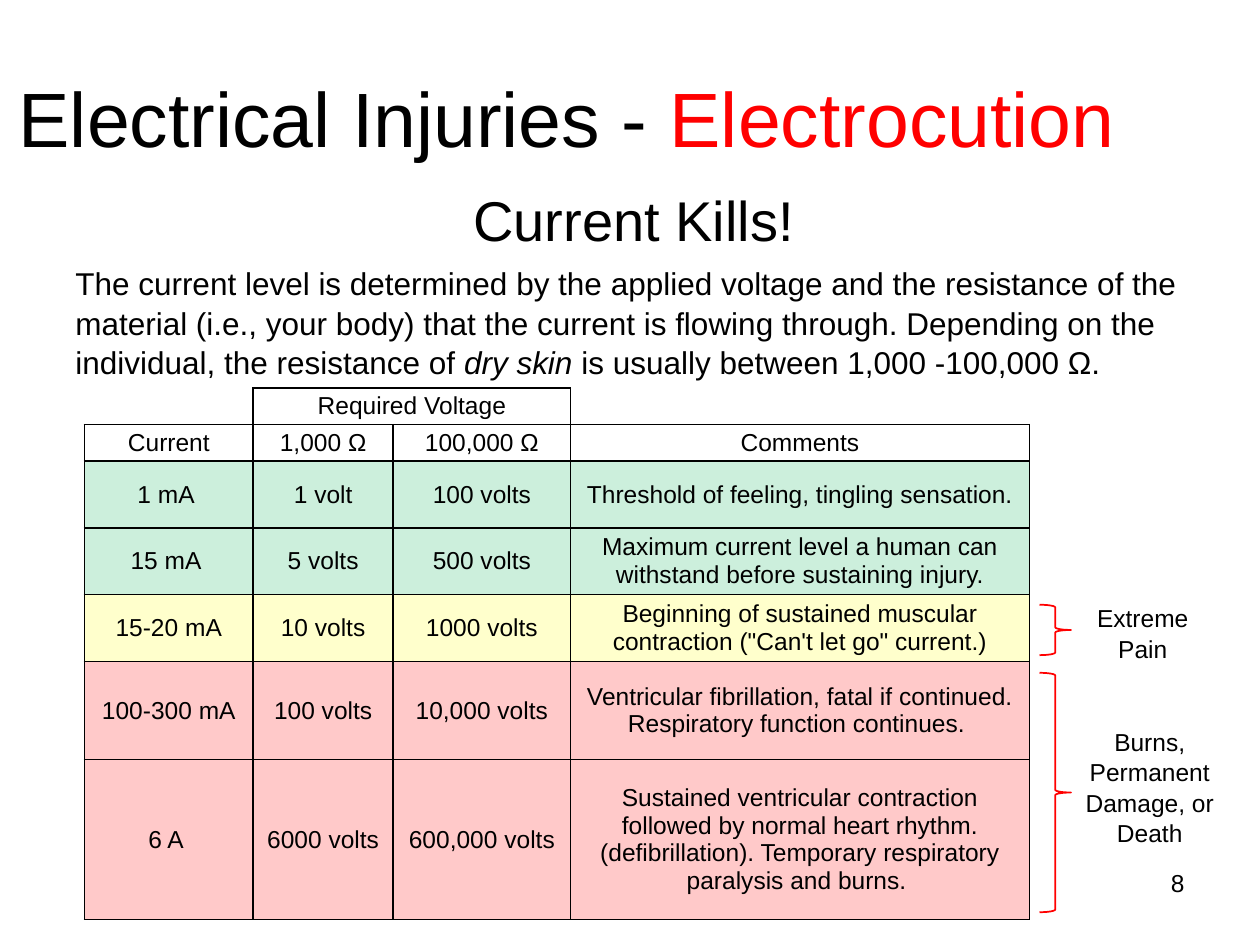
from lxml import etree
from pptx import Presentation
from pptx.dml.color import RGBColor
from pptx.enum.shapes import MSO_SHAPE
from pptx.enum.text import MSO_ANCHOR, PP_ALIGN
from pptx.oxml.ns import qn
from pptx.util import Inches, Pt

BRACE = MSO_SHAPE.RIGHT_BRACE
TOP, MIDDLE = MSO_ANCHOR.TOP, MSO_ANCHOR.MIDDLE
LEFT, CENTER, RIGHT = PP_ALIGN.LEFT, PP_ALIGN.CENTER, PP_ALIGN.RIGHT

COLORS = {
    "black": "000000",
    "red": "FF0000",
    "green": "00B050",
    "yellow": "FFFF00",
}
COLS = [1.34, 1.11, 1.41, 3.64]
ROWS = [
    (0.29, None, ["", "Required Voltage", "", ""]),
    (0.29, None, ["Current", "1,000 Ω", "100,000 Ω", "Comments"]),
    (0.53, ("green", 20), ["1 mA ", "1 volt", "100 volts",
                           "Threshold of feeling, tingling sensation."]),
    (0.53, ("green", 20), ["15 mA ", "5 volts", "500 volts",
                           "Maximum current level a human can withstand before sustaining injury."]),
    (0.53, ("yellow", 20), ["15-20 mA", "10 volts", "1000 volts",
                            "Beginning of sustained muscular contraction (\"Can't let go\" current.)"]),
    (0.78, ("red", 21), ["100-300 mA", "100 volts", "10,000 volts",
                         "Ventricular fibrillation, fatal if continued. Respiratory function continues. "]),
    (1.27, ("red", 21), ["6 A ", "6000 volts", "600,000 volts",
                         "Sustained ventricular contraction followed by normal heart rhythm. "
                         "(defibrillation). Temporary respiratory paralysis and burns. "]),
]
OPEN_SIDES = {(0, 0): "RB", (0, 3): "LB"}


def rgb(name):
    return RGBColor.from_string(COLORS[name])


def apply(item, values):
    for key, value in values.items():
        setattr(item, key, value)


def write(para, runs, size, align=CENTER, **form):
    apply(para, {"alignment": align, **form})
    for text, color, slant in runs:
        run = para.add_run()
        run.text = text
        apply(run.font, {"name": "Arial", "size": Pt(size), "italic": slant})
        run.font.color.rgb = rgb(color)


def add_box(slide, box, anchor=TOP):
    frame = slide.shapes.add_textbox(*map(Inches, box)).text_frame
    apply(frame, {"word_wrap": True, "vertical_anchor": anchor})
    return frame


def add_label(slide, box, text, align=CENTER):
    para = add_box(slide, box).paragraphs[0]
    write(para, [(text, "black", None)], 14, align, line_spacing=1.04)


def add_brace(slide, top, height):
    brace = slide.shapes.add_shape(
        BRACE, Inches(8.25), Inches(top), Inches(0.25), Inches(height))
    brace.shadow.inherit = False
    brace.fill.background()
    brace.line.color.rgb = rgb("red")
    brace.line.width = Pt(1)


def add_edges(cell, sides):
    props = cell._tc.get_or_add_tcPr()
    for side in "LRTB":
        line = etree.SubElement(props, qn("a:ln" + side), w=str(Pt(1)))
        if side in sides:
            fill = etree.SubElement(line, qn("a:solidFill"))
            etree.SubElement(fill, qn("a:srgbClr"), val=COLORS["black"])
        else:
            etree.SubElement(line, qn("a:noFill"))


def tint(cell, shade):
    if shade is None:
        cell.fill.background()
        return
    color, alpha = shade
    cell.fill.solid()
    cell.fill.fore_color.rgb = rgb(color)
    node = cell._tc.tcPr.find(qn("a:solidFill")).find(qn("a:srgbClr"))
    etree.SubElement(node, qn("a:alpha"), val=str(alpha * 1000))


def add_grid(slide):
    height = sum(row[0] for row in ROWS)
    table = slide.shapes.add_table(
        len(ROWS), len(COLS), Inches(0.67), Inches(3.08),
        Inches(sum(COLS)), Inches(height)).table
    apply(table, {"first_row": False, "horz_banding": False})
    for col, width in zip(table.columns, COLS):
        col.width = Inches(width)
    form = {
        "vertical_anchor": MIDDLE,
        "margin_left": Inches(0.04), "margin_right": Inches(0.04),
        "margin_top": Inches(0.02), "margin_bottom": Inches(0.02),
    }
    for r, (tall, shade, texts) in enumerate(ROWS):
        table.rows[r].height = Inches(tall)
        for c, text in enumerate(texts):
            cell = table.cell(r, c)
            apply(cell, form)
            add_edges(cell, OPEN_SIDES.get((r, c), "LRTB"))
            tint(cell, shade)
            para = cell.text_frame.paragraphs[0]
            if text:
                write(para, [(text, "black", None)], 14)
            else:
                para.font.size = Pt(14)
    table.cell(0, 1).merge(table.cell(0, 2))


def add_title(slide):
    para = add_box(slide, (0, 0.3, 9, 1.25), MIDDLE).paragraphs[0]
    write(para, [("Electrical Injuries - ", "black", None),
                 ("Electrocution", "red", None)], 44)


def add_body(slide):
    frame = add_box(slide, (0.5, 1.42, 9, 1.67))
    head = frame.paragraphs[0]
    write(head, [("Current Kills!", "black", None)], 32, space_after=Pt(6))
    props = head._p.get_or_add_pPr()
    props.set("marL", str(Inches(0.56)))
    props.set("indent", str(Inches(-0.5)))
    write(frame.add_paragraph(), [
        ("The current level is determined by the applied voltage and the resistance "
         "of the material (i.e., your body) that the current is flowing through. "
         "Depending on the individual, the resistance of ", "black", None),
        ("dry skin", "black", True),
        (" is usually between 1,000 -100,000 Ω.", "black", False),
    ], 18, LEFT, space_after=Pt(18), line_spacing=1.04)


def main():
    deck = Presentation()
    apply(deck, {"slide_width": Inches(10), "slide_height": Inches(7.5)})
    slide = deck.slides.add_slide(deck.slide_layouts[6])
    add_title(slide)
    add_body(slide)
    add_label(slide, (7.17, 6.83, 2.33, 0.52), "8", RIGHT)
    add_grid(slide)
    add_brace(slide, 4.8, 0.4)
    add_brace(slide, 5.34, 1.9)
    add_label(slide, (8.5, 5.71, 1.25, 1.03), "Burns, Permanent Damage, or Death")
    add_label(slide, (8.57, 4.73, 1, 0.57), "Extreme Pain")
    deck.save("out.pptx")


if __name__ == "__main__":
    main()
